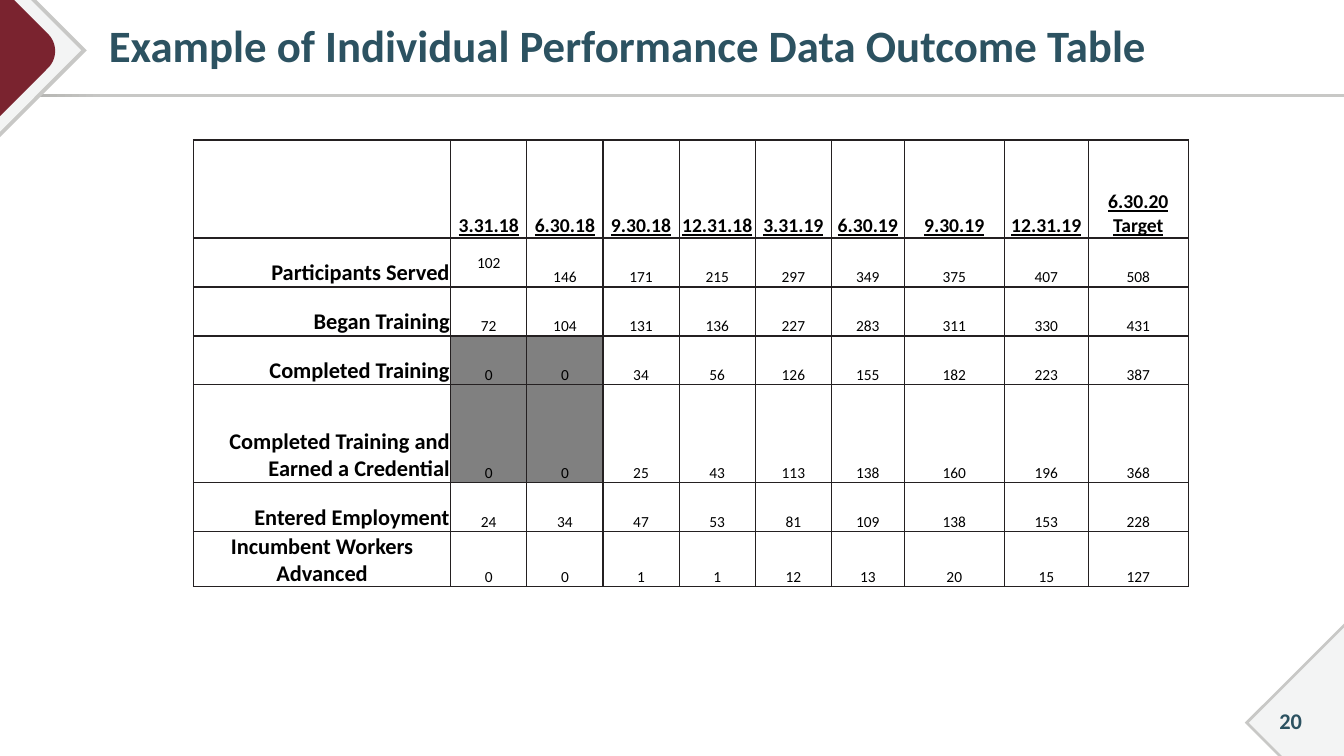
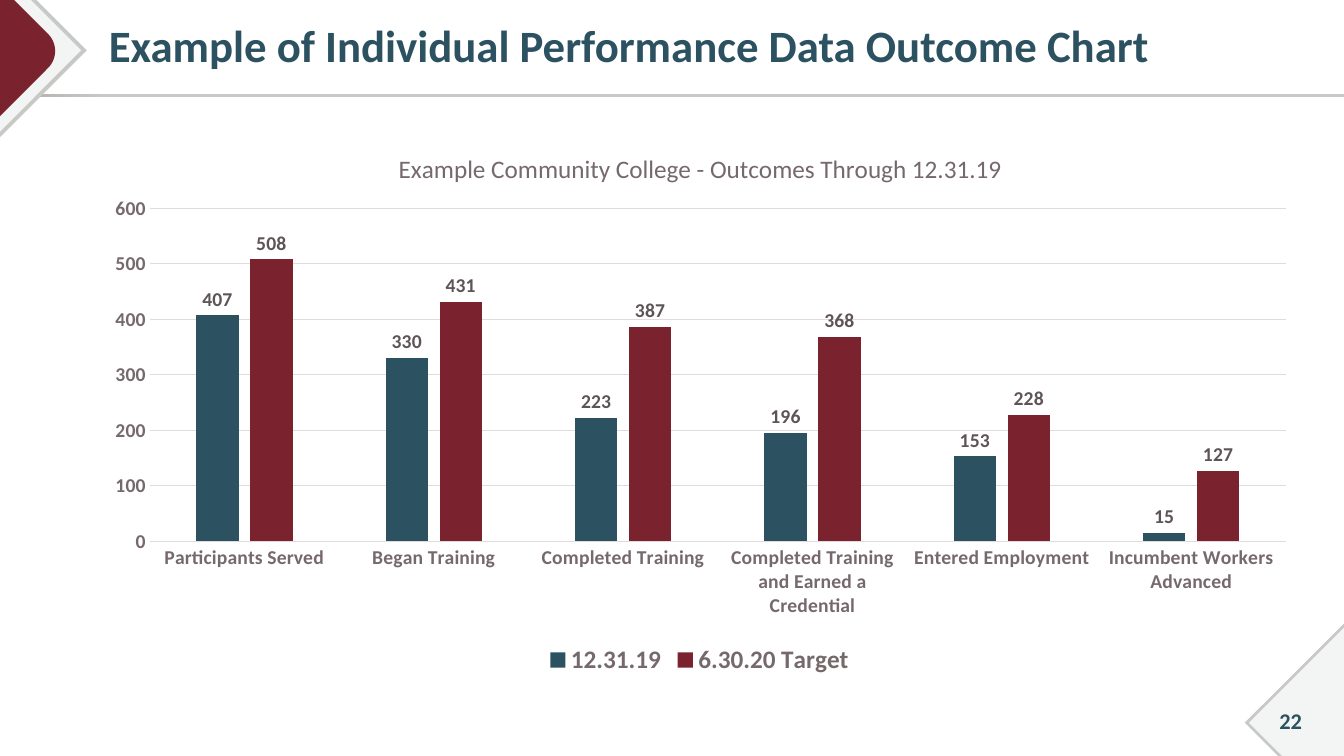
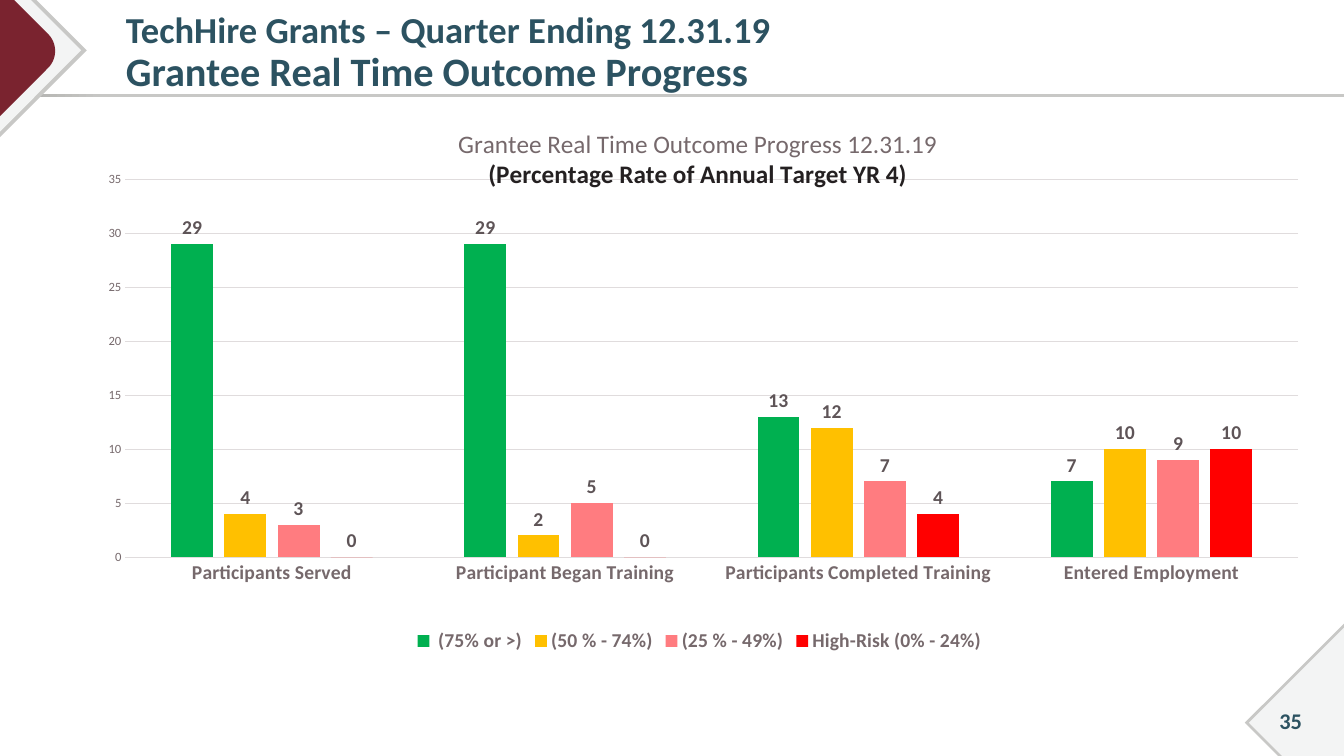
from lxml.etree import SubElement
from pptx import Presentation
from pptx.chart.data import CategoryChartData
from pptx.dml.color import RGBColor
from pptx.enum.chart import XL_CHART_TYPE, XL_LABEL_POSITION, XL_LEGEND_POSITION, XL_TICK_MARK
from pptx.enum.shapes import MSO_SHAPE
from pptx.enum.text import MSO_ANCHOR, PP_ALIGN
from pptx.oxml.ns import qn
from pptx.util import Pt

FONT = "Calibri"
WIDTH, HEIGHT = 960, 540
COLORS = {
    "teal": "2C5261", "maroon": "7A232F", "silver": "C8C8C6", "shade": "ABABA8",
    "pale": "F3F4F4", "ink": "242021", "black": "000000", "blocked": "808080",
    "axis": "76696C", "label": "5E5457", "grid": "E0DCDD", "green": "00B050",
    "amber": "FFC000", "pink": "FF7C80", "red": "FF0000",
}
TITLE_BOX = (63.36, 3.6, 872.64, 61.92)
TABLE_BOX = (138.24, 100, 710.7, 318.6)
COLUMN_WIDTHS = [183.7] + [54.4] * 5 + [52, 71.5, 60, 71.5]
ROW_HEIGHTS = [70, 35, 35, 35, 70, 35, 38.6]
DATES = ["3.31.18", "6.30.18", "9.30.18", "12.31.18", "3.31.19",
         "6.30.19", "9.30.19", "12.31.19", "6.30.20 Target"]
OUTCOMES = {
    "Participants Served": [102, 146, 171, 215, 297, 349, 375, 407, 508],
    "Began Training": [72, 104, 131, 136, 227, 283, 311, 330, 431],
    "Completed Training": [0, 0, 34, 56, 126, 155, 182, 223, 387],
    "Completed Training and Earned a Credential": [0, 0, 25, 43, 113, 138, 160, 196, 368],
    "Entered Employment": [24, 34, 47, 53, 81, 109, 138, 153, 228],
    "Incumbent Workers Advanced": [0, 0, 1, 1, 12, 13, 20, 15, 127],
}


def rgb(name):
    """Return the named colour."""
    return RGBColor.from_string(COLORS[name])


def style_font(font, size, color, bold=False, underline=False):
    """Set every property of a font."""
    font.name, font.size, font.bold, font.underline = FONT, Pt(size), bold, underline
    font.color.rgb = rgb(color)


def write(para, text, align=None, **style):
    """Add one formatted span to a paragraph."""
    span = para.add_run()
    span.text = text
    style_font(span.font, **style)
    if align is not None:
        para.alignment = align


def add_text_box(page, box, left_inset=7.2):
    """Add a wrapped, vertically centred box and return its paragraph."""
    frame = page.shapes.add_textbox(*map(Pt, box)).text_frame
    frame.word_wrap = True
    frame.vertical_anchor = MSO_ANCHOR.MIDDLE
    frame.margin_left = Pt(left_inset)
    return frame.paragraphs[0]


def add_outline(page, points, color):
    """Draw a filled polygon from points."""
    builder = page.shapes.build_freeform(Pt(points[0][0]), Pt(points[0][1]))
    builder.add_line_segments([(Pt(x), Pt(y)) for x, y in points[1:]])
    shape = builder.convert_to_shape()
    shape.shadow.inherit = False
    shape.fill.solid()
    shape.fill.fore_color.rgb = rgb(color)
    shape.line.fill.background()


def curve(start, first, second, end, steps=16):
    """Return points along a cubic curve."""
    def blend(t, a, b, c, d):
        return (1 - t) ** 3 * a + 3 * (1 - t) ** 2 * t * b + 3 * (1 - t) * t ** 2 * c + t ** 3 * d
    return [tuple(blend(step / steps, *axis) for axis in zip(start, first, second, end))
            for step in range(steps + 1)]


def add_band(page, top=67, height=2.3):
    """Draw the rule below the title."""
    band = page.shapes.add_shape(MSO_SHAPE.RECTANGLE, 0, Pt(top), Pt(WIDTH), Pt(height))
    band.shadow.inherit = False
    band.line.fill.background()
    band.fill.gradient()
    band.fill.gradient_angle = 0
    for stop, position, color in zip(band.fill.gradient_stops, (0, 0.08), ("shade", "silver")):
        stop.position = position
        stop.color.rgb = rgb(color)


def add_corners(page):
    """Draw the nested arrow at top left and the number corner at bottom right."""
    for tip, color in ((62, "silver"), (58, "pale")):
        add_outline(page, [(0, 0), (tip - 36, 0), (tip, 36), (0, tip + 36)], color)
    nose = curve((34.6, 24.5), (41, 31), (41, 41.8), (34.6, 48.3))
    add_outline(page, [(0, 0), (10.1, 0)] + nose + [(0, 82.9)], "maroon")
    for tip, color in ((889.2, "silver"), (892.1, "pale")):
        add_outline(page, [(WIDTH, 516.2 - WIDTH + tip), (WIDTH, HEIGHT),
                           (tip + HEIGHT - 516.2, HEIGHT), (tip, 516.2)], color)


def add_page(deck, number, title_lines, sizes=(32,), title_box=TITLE_BOX):
    """Add a slide with band, corners, title and number."""
    page = deck.slides.add_slide(deck.slide_layouts[6])
    add_band(page)
    add_corners(page)
    para = add_text_box(page, title_box, left_inset=14.4)
    para.line_spacing = 0.9
    for index, (line, size) in enumerate(zip(title_lines, sizes)):
        if index:
            para.add_line_break()
        write(para, line, size=size, color="teal", bold=True)
    write(add_text_box(page, (896.4, 500.4, 51.12, 28.8)), str(number),
          size=16, color="teal", bold=True, align=PP_ALIGN.CENTER)
    return page


def add_borders(cell, color="ink", width=1):
    """Draw a line on each side of a cell."""
    properties = cell._tc.get_or_add_tcPr()
    for side in ("a:lnL", "a:lnR", "a:lnT", "a:lnB"):
        line = SubElement(properties, qn(side), w=str(int(Pt(width))))
        SubElement(SubElement(line, qn("a:solidFill")), qn("a:srgbClr"), val=COLORS[color])


def fill_cell(cell, text, blocked=False, anchor=MSO_ANCHOR.BOTTOM, **style):
    """Format one table cell and write its text."""
    add_borders(cell)
    if blocked:
        cell.fill.solid()
        cell.fill.fore_color.rgb = rgb("blocked")
    else:
        cell.fill.background()
    cell.margin_left = cell.margin_right = cell.margin_top = Pt(0.72)
    cell.margin_bottom = 0
    cell.vertical_anchor = anchor
    if text:
        write(cell.text_frame.paragraphs[0], text, color="black", **style)


def add_outcome_table(page, box):
    """Place the table of outcomes by date."""
    table = page.shapes.add_table(len(ROW_HEIGHTS), len(COLUMN_WIDTHS), *map(Pt, box)).table
    table.first_row = table.horz_banding = False
    for column, width in zip(table.columns, COLUMN_WIDTHS):
        column.width = Pt(width)
    for row, height in zip(table.rows, ROW_HEIGHTS):
        row.height = Pt(height)
    for column, date in enumerate([""] + DATES):
        fill_cell(table.cell(0, column), date, size=14, bold=True, underline=True,
                  align=PP_ALIGN.CENTER)
    for row, (outcome, values) in enumerate(OUTCOMES.items(), 1):
        last = row == len(OUTCOMES)
        fill_cell(table.cell(row, 0), outcome, size=16, bold=True,
                  align=PP_ALIGN.CENTER if last else PP_ALIGN.RIGHT)
        for column, value in enumerate(values, 1):
            first_value = row == column == 1
            fill_cell(table.cell(row, column), str(value), size=11, align=PP_ALIGN.CENTER,
                      blocked=row in (3, 4) and column < 3,
                      anchor=MSO_ANCHOR.MIDDLE if first_value else MSO_ANCHOR.BOTTOM)


def set_layout(parent, index, **places):
    """Give a chart part a fixed place as fractions of the chart."""
    for old in parent.findall(qn("c:layout")):
        parent.remove(old)
    layout = SubElement(parent, qn("c:layout"))
    parent.insert(index, layout)
    manual = SubElement(layout, qn("c:manualLayout"))
    if "w" in places:
        SubElement(manual, qn("c:layoutTarget"), val="inner")
    for mode in ("xMode", "yMode"):
        SubElement(manual, qn("c:" + mode), val="edge")
    for key, value in places.items():
        SubElement(manual, qn("c:" + key), val=str(value))


def style_axes(chart, maximum, step, size, bold):
    """Format both axes and the gridlines."""
    category, value = chart.category_axis, chart.value_axis
    for axis in (category, value):
        axis.major_tick_mark = axis.minor_tick_mark = XL_TICK_MARK.NONE
    style_font(category.tick_labels.font, 14, "axis", bold=True)
    style_font(value.tick_labels.font, size, "axis", bold=bold)
    value.minimum_scale, value.maximum_scale, value.major_unit = 0, maximum, step
    value.has_major_gridlines = True
    value.format.line.fill.background()
    for line in (category.format.line, value.major_gridlines.format.line):
        line.color.rgb = rgb("grid")
        line.width = Pt(0.75)


def add_column_chart(page, box, categories, series, titles, title_place, plot_place,
                     scale, axis_size, axis_bold, legend_size):
    """Place a clustered column chart with labels, title and legend."""
    data = CategoryChartData(number_format="0")
    data.categories = categories
    for name, values, _ in series:
        data.add_series(name, values)
    chart = page.shapes.add_chart(XL_CHART_TYPE.COLUMN_CLUSTERED, *map(Pt, box), data).chart
    style_font(chart.font, 10, "ink")
    chart.has_title = True
    frame = chart.chart_title.text_frame
    for index, (text, color, bold) in enumerate(titles):
        para = frame.add_paragraph() if index else frame.paragraphs[0]
        write(para, text, size=18, color=color, bold=bold, align=PP_ALIGN.CENTER)
    chart_part = chart._chartSpace.find(qn("c:chart"))
    set_layout(chart_part.find(qn("c:title")), 1, **title_place)
    set_layout(chart_part.find(qn("c:plotArea")), 0, **plot_place)
    style_axes(chart, *scale, axis_size, axis_bold)
    chart.has_legend = True
    chart.legend.position = XL_LEGEND_POSITION.BOTTOM
    chart.legend.include_in_layout = False
    style_font(chart.legend.font, legend_size, "axis", bold=True)
    plot = chart.plots[0]
    plot.gap_width, plot.overlap, plot.vary_by_categories = 219, -27, False
    for columns, (_, _, color) in zip(plot.series, series):
        columns.format.fill.solid()
        columns.format.fill.fore_color.rgb = rgb(color)
        labels = columns.data_labels
        labels.show_value = True
        labels.position = XL_LABEL_POSITION.OUTSIDE_END
        style_font(labels.font, 14, "label", bold=True)


def build_table_slide(deck):
    """Build the outcome table slide."""
    page = add_page(deck, 20, ["Example of Individual Performance Data Outcome Table"])
    add_outcome_table(page, TABLE_BOX)


def build_college_slide(deck):
    """Build the chart of one college against its target."""
    page = add_page(deck, 22, ["Example of Individual Performance Data Outcome Chart"])
    series = [(DATES[index], [values[index] for values in OUTCOMES.values()], color)
              for index, color in ((-2, "teal"), (-1, "maroon"))]
    add_column_chart(
        page, (63.36, 89.28, 872.64, 396.72), list(OUTCOMES), series,
        titles=[("Example Community College - Outcomes Through 12.31.19", "axis", False)],
        title_place={"x": 0.25, "y": 0.04},
        plot_place={"x": 0.05, "y": 0.15, "w": 0.93, "h": 0.6},
        scale=(600, 100), axis_size=14, axis_bold=True, legend_size=18)


def build_grantee_slide(deck):
    """Build the chart of grantee progress."""
    page = add_page(
        deck, 35, ["TechHire Grants – Quarter Ending 12.31.19", "Grantee Real Time Outcome Progress"],
        sizes=(26.1, 28.8), title_box=(75.6, 10.8, 626.4, 55.44))
    add_column_chart(
        page, (63.36, 72.72, 872.64, 396.72),
        ["Participants Served", "Participant Began Training",
         "Participants Completed Training", "Entered Employment"],
        [(" (75% or >)", [29, 29, 13, 7], "green"),
         ("(50 % - 74%)", [4, 2, 12, 10], "amber"),
         ("(25 % - 49%)", [3, 5, 7, 9], "pink"),
         ("High-Risk (0% - 24%)", [0, 0, 4, 10], "red")],
        titles=[("Grantee Real Time Outcome Progress 12.31.19", "axis", False),
                ("(Percentage Rate of Annual Target YR 4)", "ink", True)],
        title_place={"x": 0.3, "y": 0.04},
        plot_place={"x": 0.03, "y": 0.14, "w": 0.96, "h": 0.68},
        scale=(35, 5), axis_size=9, axis_bold=False, legend_size=14)


def main():
    """Build and save the deck."""
    deck = Presentation()
    deck.slide_width, deck.slide_height = Pt(WIDTH), Pt(HEIGHT)
    for build in (build_table_slide, build_college_slide, build_grantee_slide):
        build(deck)
    deck.save("out.pptx")


if __name__ == "__main__":
    main()
